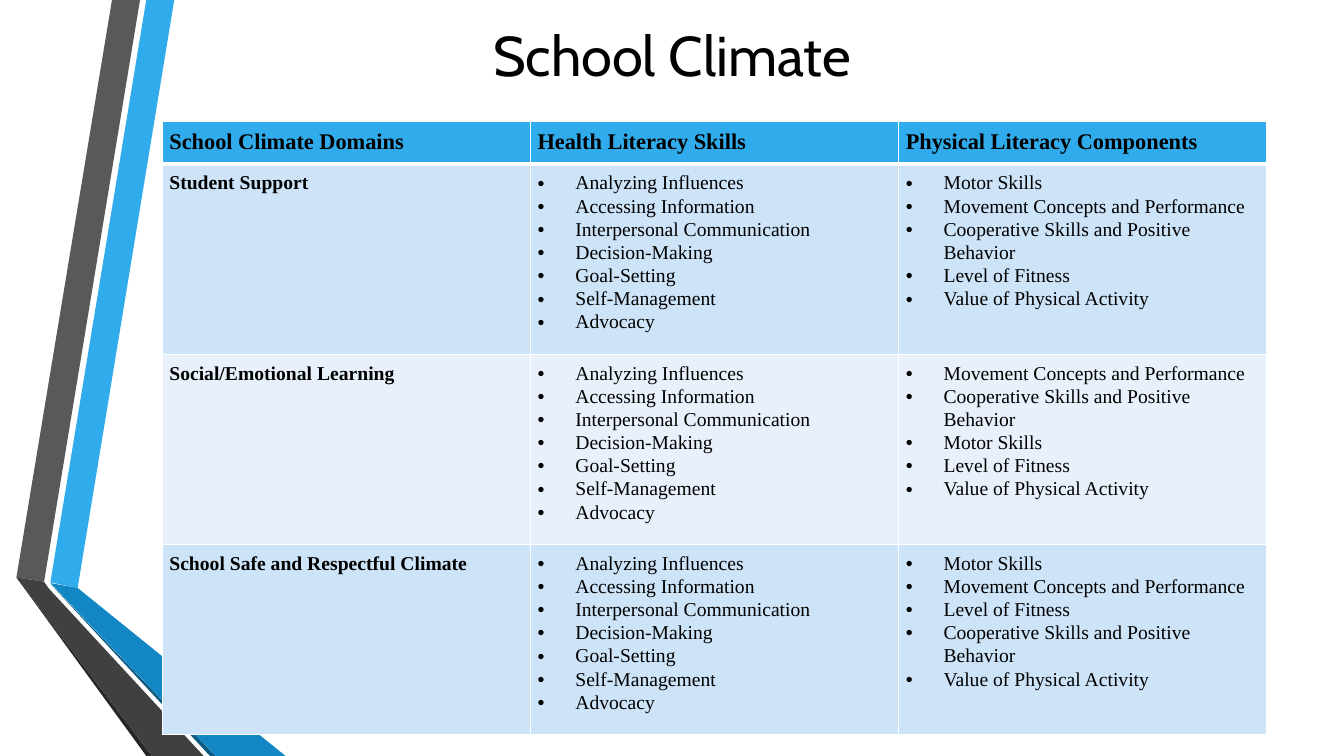
"""Build the School Climate slide with its ribbon artwork and domain table."""
from dataclasses import dataclass

from lxml.etree import SubElement
from pptx import Presentation
from pptx.dml.color import RGBColor
from pptx.enum.text import MSO_ANCHOR, PP_ALIGN
from pptx.oxml.ns import qn
from pptx.util import Pt


@dataclass(frozen=True)
class Theme:
    text: str = "000000"
    rule: str = "FFFFFF"
    blue: str = "30ACEC"
    blue_fold: str = "1287C3"
    blue_edge: str = "0C5A82"
    gray: str = "595959"
    gray_fold: str = "404040"
    gray_edge: str = "262626"
    band_dark: str = "CDE3F8"
    band_light: str = "E8F1FB"
    title_font: str = "Cabin"
    table_font: str = "Times New Roman"
    bullet_font: str = "Arial"
    title_size: int = 40
    header_size: int = 16
    body_size: int = 14


def write_line(paragraph, text, font_format):
    run = paragraph.add_run()
    run.text = text
    run.font.color.rgb = RGBColor.from_string(theme.text)
    for name, value in font_format.items():
        setattr(run.font, name, value)


def add_border(cell, side, width):
    border = SubElement(cell._tc.get_or_add_tcPr(), qn(f"a:ln{side}"), w=str(Pt(width)))
    fill = SubElement(border, qn("a:solidFill"))
    SubElement(fill, qn("a:srgbClr"), val=theme.rule)


theme = Theme()
presentation = Presentation()
presentation.slide_width, presentation.slide_height = Pt(960), Pt(540)
slide = presentation.slides.add_slide(presentation.slide_layouts[6])

ribbons = [
    (theme.blue, [(36, 416), (55.5, 420), (124.5, 0), (104.5, 0)]),
    (theme.gray, [(100, 0), (80, 0), (11.7, 412.5), (31.5, 415.5)]),
    (theme.gray_edge, [(11.7, 412.5), (104.5, 540), (108.5, 540)]),
    (theme.blue_edge, [(36, 417), (150, 540), (154, 540)]),
    (theme.blue_fold, [(36, 416.5), (154, 540), (204, 540), (55.5, 420)]),
    (theme.gray_fold, [(145.5, 540), (34.5, 420), (31.5, 415.5), (11.7, 412.5), (108.5, 540)]),
]
for color, corners in ribbons:
    start, *others = [(Pt(x), Pt(y)) for x, y in corners]
    outline = slide.shapes.build_freeform(*start)
    outline.add_line_segments(others, close=True)
    ribbon = outline.convert_to_shape()
    ribbon.shadow.inherit = False
    ribbon.fill.solid()
    ribbon.fill.fore_color.rgb = RGBColor.from_string(color)
    ribbon.line.fill.background()

title = slide.shapes.add_textbox(Pt(116), Pt(0), Pt(728), Pt(78)).text_frame
title.word_wrap = True
title.vertical_anchor = MSO_ANCHOR.MIDDLE
title.paragraphs[0].alignment = PP_ALIGN.CENTER
write_line(title.paragraphs[0], "School Climate",
           {"name": theme.title_font, "size": Pt(theme.title_size)})

headings = ["School Climate Domains", "Health Literacy Skills", "Physical Literacy Components"]
health_skills = ["Analyzing Influences", "Accessing Information", "Interpersonal Communication",
                 "Decision-Making", "Goal-Setting", "Self-Management", "Advocacy"]
motor = "Motor Skills"
movement = "Movement Concepts and Performance"
cooperation = "Cooperative Skills and Positive Behavior"
fitness = "Level of Fitness"
activity = "Value of Physical Activity"
domains = [
    ("Student Support", [motor, movement, cooperation, fitness, activity]),
    ("Social/Emotional Learning", [movement, cooperation, motor, fitness, activity]),
    ("School Safe and Respectful Climate", [motor, movement, fitness, cooperation, activity]),
]
rows = [[[heading] for heading in headings]]
rows += [[[domain], health_skills, components] for domain, components in domains]

row_height = 29.3
column_width = 263
climate_table = slide.shapes.add_table(
    len(rows), len(headings), Pt(116), Pt(86.6),
    Pt(column_width * len(headings)), Pt(row_height * len(rows))).table
for column in climate_table.columns:
    column.width = Pt(column_width)

cell_format = {"margin_left": Pt(5), "margin_right": Pt(5), "margin_top": Pt(5),
               "margin_bottom": Pt(5), "vertical_anchor": MSO_ANCHOR.TOP}
for row_index, row in enumerate(rows):
    climate_table.rows[row_index].height = Pt(row_height)
    is_header = row_index == 0
    band = theme.blue if is_header else (theme.band_light, theme.band_dark)[row_index % 2]
    widths = {"L": 1, "R": 1, "T": 3 if row_index == 1 else 1, "B": 3 if is_header else 1}
    for column_index, lines in enumerate(row):
        cell = climate_table.cell(row_index, column_index)
        for name, value in cell_format.items():
            setattr(cell, name, value)
        for side, width in widths.items():
            add_border(cell, side, width)
        cell.fill.solid()
        cell.fill.fore_color.rgb = RGBColor.from_string(band)
        is_list = not is_header and column_index > 0
        font_format = {"name": theme.table_font, "bold": not is_list,
                       "size": Pt(theme.header_size if is_header else theme.body_size)}
        for line_index, line in enumerate(lines):
            frame = cell.text_frame
            paragraph = frame.paragraphs[0] if line_index == 0 else frame.add_paragraph()
            if is_list:
                properties = paragraph._p.get_or_add_pPr()
                properties.set("marL", str(Pt(27)))
                properties.set("indent", str(Pt(-27)))
                SubElement(properties, qn("a:buFont"), typeface=theme.bullet_font)
                SubElement(properties, qn("a:buChar"), char="•")
                tabs = SubElement(properties, qn("a:tabLst"))
                SubElement(tabs, qn("a:tab"), pos=str(Pt(36)), algn="l")
            paragraph.line_spacing = 1.07
            write_line(paragraph, line, font_format)

presentation.save("out.pptx")
